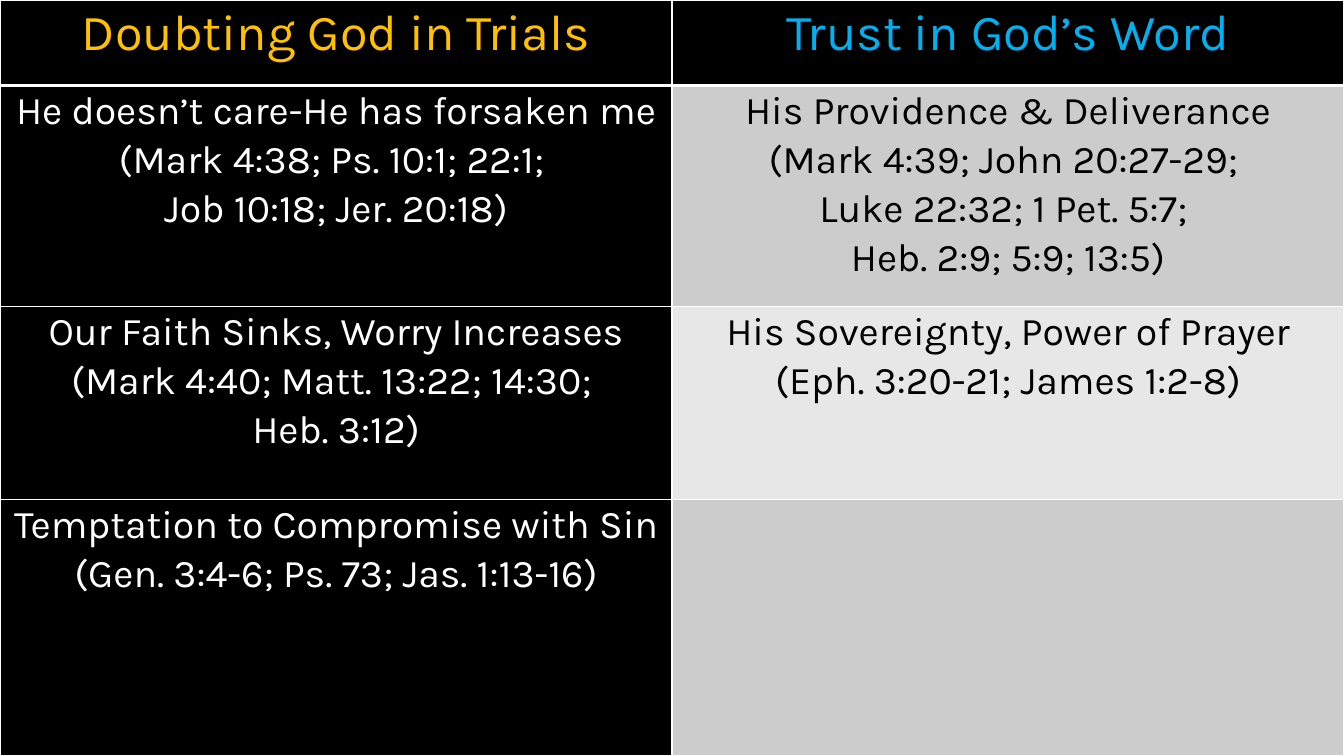
from lxml.etree import SubElement
from pptx import Presentation
from pptx.dml.color import RGBColor
from pptx.enum.text import MSO_ANCHOR, PP_ALIGN
from pptx.oxml.ns import qn
from pptx.util import Pt

SLIDE_WIDTH, SLIDE_HEIGHT = Pt(960), Pt(540)
ROW_HEIGHTS = [Pt(61), Pt(158), Pt(138), Pt(183)]
FONT = "Karla"

BLACK = RGBColor(0x00, 0x00, 0x00)
WHITE = RGBColor(0xFF, 0xFF, 0xFF)
GOLD = RGBColor(0xFF, 0xC0, 0x00)
BLUE = RGBColor(0x00, 0xB0, 0xF0)
GRAY = RGBColor(0xCC, 0xCC, 0xCC)
LIGHT_GRAY = RGBColor(0xE7, 0xE7, 0xE7)

HEADINGS = [("Doubting God in Trials", GOLD), ("Trust in God’s Word", BLUE)]

# Each row: doubts, answers, fill behind the answers
COMPARISONS = [
    (["He doesn’t care-He has forsaken me (Mark 4:38; Ps. 10:1; 22:1; ",
      "Job 10:18; Jer. 20:18)"],
     ["His Providence & Deliverance",
      "(Mark 4:39; John 20:27-29; ",
      "Luke 22:32; 1 Pet. 5:7; ",
      "Heb. 2:9; 5:9; 13:5)"], GRAY),
    (["Our Faith Sinks, Worry Increases (Mark 4:40; Matt. 13:22; 14:30; ",
      "Heb. 3:12)"],
     ["His Sovereignty, Power of Prayer (Eph. 3:20-21; James 1:2-8)"],
     LIGHT_GRAY),
    (["Temptation to Compromise with Sin (Gen. 3:4-6; Ps. 73; Jas. 1:13-16)"],
     [], GRAY),
]


def write_text(frame, lines, size=28, color=WHITE):
    for index, line in enumerate(lines):
        paragraph = frame.add_paragraph() if index else frame.paragraphs[0]
        paragraph.alignment = PP_ALIGN.CENTER
        paragraph.line_spacing = 1.07
        paragraph.space_before = paragraph.space_after = Pt(0)
        run = paragraph.add_run()
        run.text = line
        run.font.name = FONT
        run.font.size = Pt(size)
        run.font.bold = False
        run.font.color.rgb = color


def draw_borders(cell, **widths):
    properties = cell._tc.get_or_add_tcPr()
    for side in "LRTB":
        width = Pt(widths.get(side, 1))
        border = SubElement(properties, qn(f"a:ln{side}"), w=str(width))
        line_fill = SubElement(border, qn("a:solidFill"))
        SubElement(line_fill, qn("a:srgbClr"), val=str(WHITE))


def fill_cell(cell, lines, fill, borders, **text_format):
    cell.margin_left = cell.margin_right = Pt(5)
    cell.margin_top = cell.margin_bottom = Pt(0)
    cell.vertical_anchor = MSO_ANCHOR.TOP
    draw_borders(cell, **borders)
    cell.fill.solid()
    cell.fill.fore_color.rgb = fill
    write_text(cell.text_frame, lines, **text_format)


def add_comparison_table(slide, left, top, width, height):
    table = slide.shapes.add_table(
        len(ROW_HEIGHTS), len(HEADINGS), left, top, width, height).table
    for column in table.columns:
        column.width = width // len(HEADINGS)
    for row, row_height in zip(table.rows, ROW_HEIGHTS):
        row.height = row_height

    # Heading row, with a thick rule below it
    for column_index, (heading, color) in enumerate(HEADINGS):
        fill_cell(table.cell(0, column_index), [heading], BLACK, {"B": 3},
                  size=36, color=color)

    # Doubts on the left, answers on the right
    for row_index, (doubts, answers, answer_fill) in enumerate(COMPARISONS, 1):
        borders = {"T": 3} if row_index == 1 else {}
        fill_cell(table.cell(row_index, 0), doubts, BLACK, borders)
        fill_cell(table.cell(row_index, 1), answers, answer_fill, borders,
                  color=BLACK)


def main():
    presentation = Presentation()
    presentation.slide_width = SLIDE_WIDTH
    presentation.slide_height = SLIDE_HEIGHT
    slide = presentation.slides.add_slide(presentation.slide_layouts[6])
    slide.background.fill.solid()
    slide.background.fill.fore_color.rgb = BLACK
    add_comparison_table(slide, Pt(0), Pt(0), SLIDE_WIDTH, SLIDE_HEIGHT)
    presentation.save("out.pptx")


if __name__ == "__main__":
    main()
